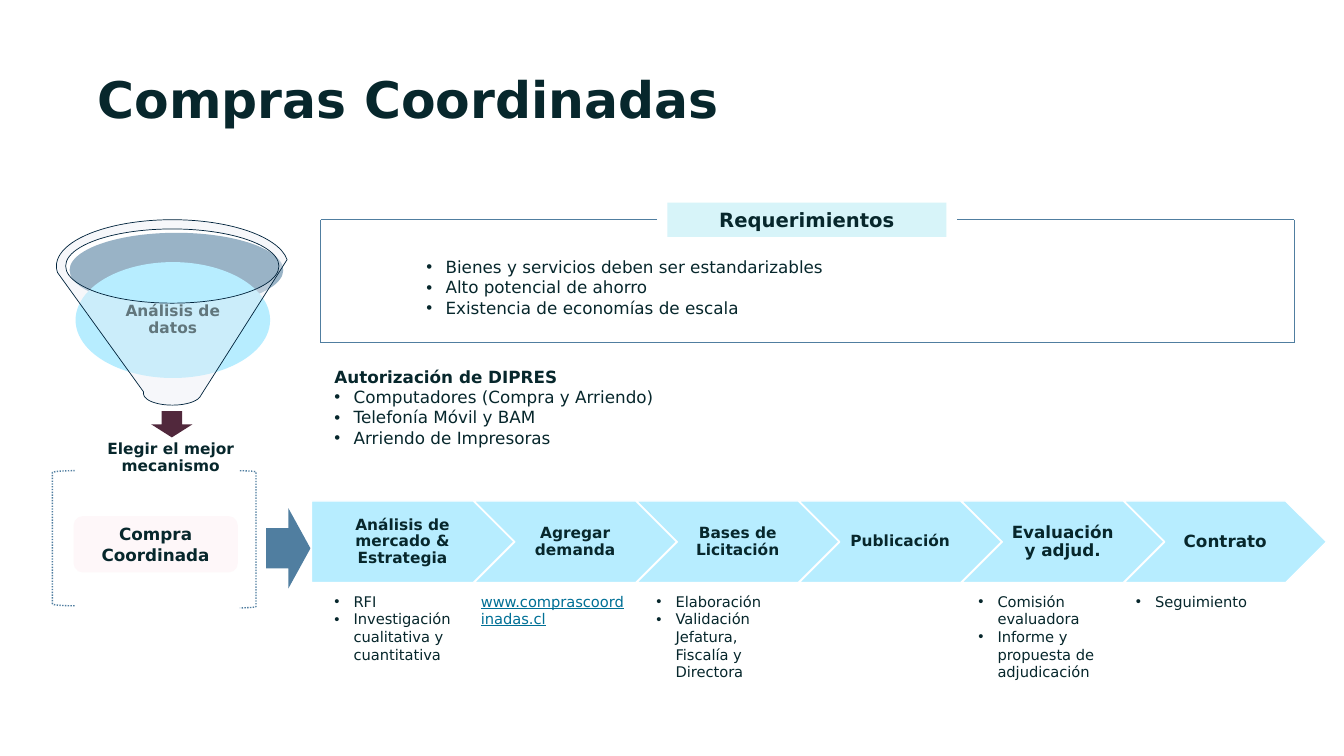
import dataclasses

import lxml.etree
import pptx
import pptx.dml.color
import pptx.enum.dml
import pptx.enum.shapes
import pptx.enum.text
import pptx.oxml.ns
import pptx.util

SHAPE = pptx.enum.shapes.MSO_SHAPE
ALIGN = pptx.enum.text.PP_ALIGN
ANCHOR = pptx.enum.text.MSO_ANCHOR
CELLS_PER_INCH = 10


@dataclasses.dataclass(frozen=True)
class Theme:
    """Colours, font and type sizes of the slide."""
    font: str = "DejaVu Sans"
    ink: str = "07272C"
    link: str = "007096"
    frame: str = "507EA0"
    step: str = "B7EDFF"
    label: str = "D7F4F9"
    choice: str = "FEF7F9"
    drop: str = "51283C"
    rim: str = "004271"
    glass: str = "E9EDF4"
    outline: str = "00233C"
    white: str = "FFFFFF"
    title: float = 36
    heading: float = 14
    body: float = 12
    caption: float = 11
    note: float = 10.5


THEME = Theme()


@dataclasses.dataclass(frozen=True)
class Box:
    """A rectangle in grid columns and rows, a tenth of an inch each."""
    left: float
    top: float
    width: float
    height: float

    def inner(self, left, top, width, height):
        """Return a box placed relative to this one."""
        return Box(self.left + left, self.top + top, width, height)

    def lengths(self):
        """Return left, top, width and height as slide lengths."""
        return [cells(value) for value in (self.left, self.top, self.width, self.height)]


def cells(count):
    """Turn a number of grid cells into a length."""
    return pptx.util.Inches(count / CELLS_PER_INCH)


def colour(code):
    """Turn a hexadecimal code into a colour."""
    return pptx.dml.color.RGBColor.from_string(code)


def add_element(parent, tag, **attributes):
    """Append an XML element to its parent."""
    return lxml.etree.SubElement(parent, pptx.oxml.ns.qn(tag), **attributes)


def add_bullet(paragraph):
    """Give a paragraph a hanging round bullet."""
    properties = paragraph._p.get_or_add_pPr()
    indent = cells(1.9)
    properties.set("marL", str(indent))
    properties.set("indent", str(-indent))
    add_element(add_element(properties, "a:buClr"), "a:srgbClr", val=THEME.ink)
    add_element(properties, "a:buFont", typeface="Arial")
    add_element(properties, "a:buChar", char="•")


def write_text(shape, lines, size=THEME.body, bold=False, ink=THEME.ink, align=ALIGN.LEFT,
               anchor=ANCHOR.TOP, margins=(1, 0.5), spacing=1.0, bullets=False,
               heading=False, underline=False):
    """Fill a shape with formatted paragraphs; a heading is a bold first line."""
    frame = shape.text_frame
    frame.word_wrap = True
    frame.auto_size = pptx.enum.text.MSO_AUTO_SIZE.NONE
    frame.vertical_anchor = anchor
    frame.margin_left = frame.margin_right = cells(margins[0])
    frame.margin_top = frame.margin_bottom = cells(margins[1])
    for index, line in enumerate(lines):
        is_heading = heading and index == 0
        paragraph = frame.add_paragraph() if index else frame.paragraphs[0]
        if bullets and not is_heading:
            add_bullet(paragraph)
        paragraph.alignment = align
        paragraph.line_spacing = spacing
        paragraph.space_before = pptx.util.Pt(0)
        run = paragraph.add_run()
        run.text = line
        run.font.name = THEME.font
        run.font.size = pptx.util.Pt(size)
        run.font.bold = bold or is_heading
        run.font.underline = underline
        run.font.color.rgb = colour(ink)


def add_text(slide, box, lines, **text_format):
    """Add a text box."""
    write_text(slide.shapes.add_textbox(*box.lengths()), lines, **text_format)


def add_shape(slide, kind, box, fill=None, opacity=None, line=None, line_width=1):
    """Add a flat preset shape."""
    shape = slide.shapes.add_shape(kind, *box.lengths())
    shape.shadow.inherit = False
    if fill:
        shape.fill.solid()
        shape.fill.fore_color.rgb = colour(fill)
    else:
        shape.fill.background()
    if opacity:
        code = shape._element.spPr.find(".//" + pptx.oxml.ns.qn("a:srgbClr"))
        add_element(code, "a:alpha", val=str(opacity * 1000))
    if line:
        shape.line.color.rgb = colour(line)
        shape.line.width = pptx.util.Pt(line_width)
    else:
        shape.line.fill.background()
    return shape


def add_line(slide, start, end):
    """Add a thin frame line between two grid points."""
    line = slide.shapes.add_connector(pptx.enum.shapes.MSO_CONNECTOR.STRAIGHT,
                                      *[cells(value) for value in (*start, *end)])
    line.line.color.rgb = colour(THEME.frame)
    line.line.width = pptx.util.Pt(1)
    add_element(line._element.spPr, "a:effectLst")


def place_placeholder(placeholder, box, lines, **text_format):
    """Move a template placeholder and write its text."""
    placeholder.left, placeholder.top, placeholder.width, placeholder.height = box.lengths()
    write_text(placeholder, lines, **text_format)


def draw_requirements(slide, box):
    """Draw the open frame with its label and list."""
    right, bottom = box.left + box.width, box.top + box.height
    label_box = box.inner(34.4, -1.7, 27.7, 3.4)
    gap = 1
    corners = [(label_box.left - gap, box.top), (box.left, box.top), (box.left, bottom),
               (right, bottom), (right, box.top),
               (label_box.left + label_box.width + gap, box.top)]
    for start, end in zip(corners, corners[1:]):
        add_line(slide, start, end)
    label = add_shape(slide, SHAPE.RECTANGLE, label_box, THEME.label)
    write_text(label, ["Requerimientos"], size=THEME.heading, bold=True, align=ALIGN.CENTER)
    place_placeholder(slide.placeholders[1], box.inner(9.5, 3.2, 77.6, 7.1),
                      ["Bienes y servicios deben ser estandarizables",
                       "Alto potencial de ahorro",
                       "Existencia de economías de escala"], bullets=True)


def draw_funnel(slide, box):
    """Draw the data funnel and the choice it leads to."""
    caption = dict(size=THEME.caption, bold=True, align=ALIGN.CENTER,
                   anchor=ANCHOR.MIDDLE, spacing=0.9)
    add_shape(slide, SHAPE.OVAL, box.inner(1.3, 1.3, 21.2, 7.4), THEME.rim, opacity=40)
    add_shape(slide, SHAPE.DOWN_ARROW, box.inner(9.4, 19, 4.1, 2.6), THEME.drop)
    add_text(slide, box.inner(1.5, 21.2, 19.7, 4.9), ["Elegir el mejor mecanismo"],
             margins=(0.9, 0.9), **caption)
    data = add_shape(slide, SHAPE.OVAL, box.inner(1.9, 4.2, 19.3, 11.5), THEME.step)
    write_text(data, ["Análisis de datos"], margins=(0.2, 0.2), **caption)
    add_shape(slide, SHAPE.FUNNEL, box, THEME.glass, opacity=40,
              line=THEME.outline, line_width=0.5)


def draw_choice(slide, box):
    """Draw the bracketed mechanism and the arrow to the process."""
    choice = add_shape(slide, SHAPE.ROUNDED_RECTANGLE, box.inner(2.1, 4.5, 16.3, 5.6),
                       THEME.choice)
    write_text(choice, ["Compra Coordinada"], bold=True, align=ALIGN.CENTER,
               anchor=ANCHOR.MIDDLE, margins=(0.5, 0.5))
    for bracket_box, rotation in ((box.inner(0, 0, 2.2, 13.4), 0),
                                  (box.inner(box.width - 1.6, 0, 1.6, box.height), 180)):
        bracket = add_shape(slide, SHAPE.LEFT_BRACKET, bracket_box, line=THEME.frame)
        bracket.rotation = rotation
        bracket.line.dash_style = pptx.enum.dml.MSO_LINE.ROUND_DOT
    add_shape(slide, SHAPE.RIGHT_ARROW, box.inner(21.2, 3.7, 4.4, 8), THEME.frame)


def draw_process(slide, box, steps):
    """Draw the row of steps with the notes under them."""
    pitch, step_width = 16.12, 20.1
    for index, (name, size, note_offset, note_width, notes, note_format) in enumerate(steps):
        kind = SHAPE.CHEVRON if index else SHAPE.PENTAGON
        step = add_shape(slide, kind, box.inner(index * pitch, 0, step_width, box.height),
                         THEME.step, line=THEME.white)
        write_text(step, [name], size=size, bold=True, align=ALIGN.CENTER,
                   anchor=ANCHOR.MIDDLE, margins=(0.4, 0.3), spacing=0.9)
        if notes:
            note_box = box.inner(index * pitch + note_offset, 8.6, note_width, 9.9)
            add_text(slide, note_box, notes, size=THEME.note, **note_format)


def main():
    """Build and save the slide."""
    presentation = pptx.Presentation()
    presentation.slide_width = cells(133.33)
    presentation.slide_height = cells(75)
    slide = presentation.slides.add_slide(presentation.slide_layouts[1])
    place_placeholder(slide.shapes.title, Box(8.7, 6.9, 80.1, 10.9), ["Compras Coordinadas"],
                      size=THEME.title, bold=True, spacing=0.9)
    listed = dict(bullets=True)
    linked = dict(ink=THEME.link, underline=True)
    steps = [
        ("Análisis de mercado & Estrategia", THEME.caption, 1.3, 14.4,
         ["RFI", "Investigación cualitativa y cuantitativa"], listed),
        ("Agregar demanda", THEME.caption, -0.3, 16.2, ["www.comprascoordinadas.cl"], linked),
        ("Bases de Licitación", THEME.caption, 1, 14.4,
         ["Elaboración", "Validación Jefatura, Fiscalía y Directora"], listed),
        ("Publicación", THEME.caption, 0, 14.4, [], listed),
        ("Evaluación y adjud.", THEME.body, 0.7, 14.4,
         ["Comisión evaluadora", "Informe y propuesta de adjudicación"], listed),
        ("Contrato", THEME.body, 0.2, 14.4, ["Seguimiento"], listed),
    ]
    draw_choice(slide, Box(5.2, 46.7, 20.2, 13.6))
    draw_process(slide, Box(30.9, 49.7, 100.7, 8.1), steps)
    draw_requirements(slide, Box(31.8, 21.8, 96.6, 12.2))
    add_text(slide, Box(32.2, 35.9, 35.6, 9.1),
             ["Autorización de DIPRES", "Computadores (Compra y Arriendo)",
              "Telefonía Móvil y BAM", "Arriendo de Impresoras"], bullets=True, heading=True)
    draw_funnel(slide, Box(5.6, 21.8, 23, 18.4))
    presentation.save("out.pptx")


if __name__ == "__main__":
    main()
